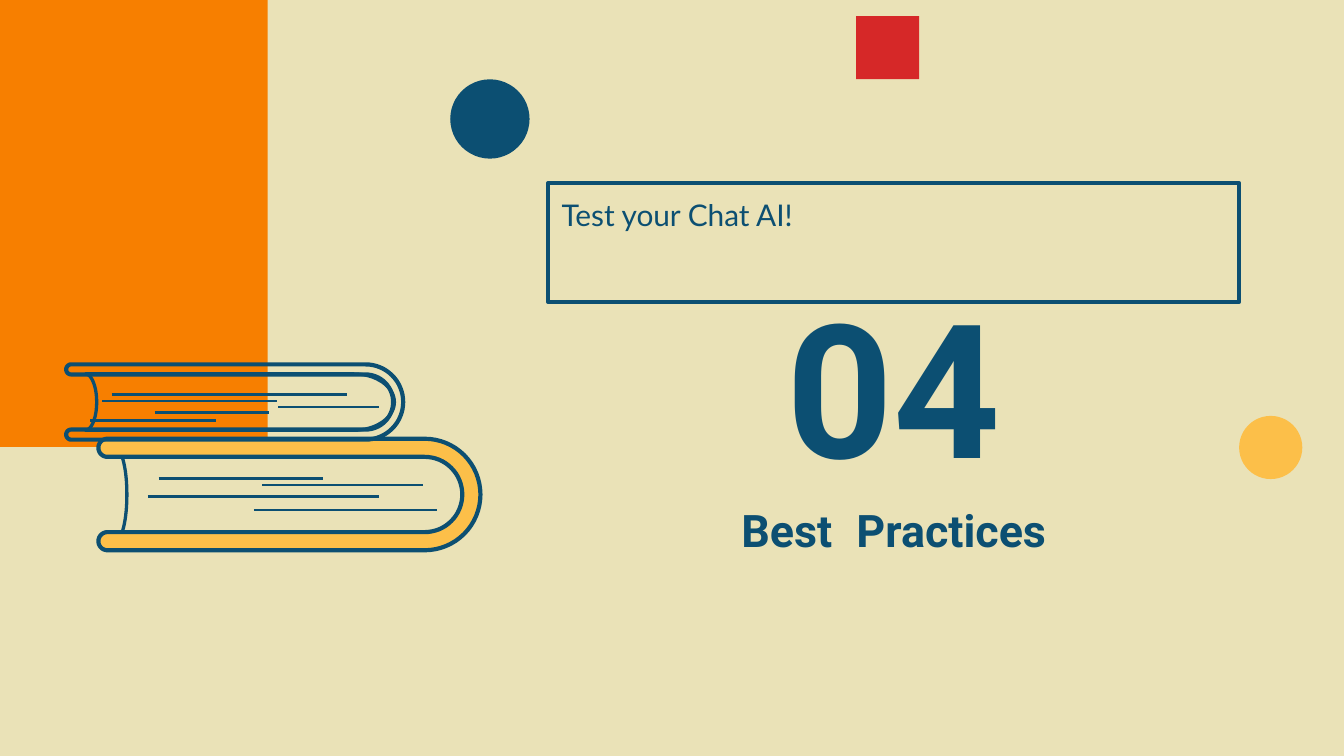
from dataclasses import dataclass
from math import cos, pi, sin
from typing import Optional

from lxml.etree import SubElement
from pptx import Presentation
from pptx.dml.color import RGBColor
from pptx.enum.shapes import MSO_CONNECTOR, MSO_SHAPE
from pptx.enum.text import MSO_ANCHOR, MSO_AUTO_SIZE, PP_ALIGN
from pptx.oxml.ns import qn
from pptx.util import Emu, Inches, Pt

CREAM = RGBColor(0xEA, 0xE2, 0xB7)
NAVY = RGBColor(0x0C, 0x4F, 0x72)
ORANGE = RGBColor(0xF7, 0x7F, 0x00)
YELLOW = RGBColor(0xFC, 0xBF, 0x49)
RED = RGBColor(0xD6, 0x28, 0x28)

# The 16:9 slide is a grid of 100 columns by 56.25 rows
COLUMNS, ROWS = 100, 56.25
CELL = Inches(0.1)
Point = tuple[float, float]


def cells(count: float) -> Emu:
    return Emu(round(count * CELL))


@dataclass
class Box:
    column: float
    row: float
    width: float
    height: float

    def emu(self) -> list[Emu]:
        return [cells(value) for value in (self.column, self.row, self.width, self.height)]


@dataclass
class Decoration:
    kind: MSO_SHAPE
    box: Box
    color: RGBColor


@dataclass
class Book:
    middle: float          # row of the horizontal axis
    left: float            # column where the cover's straight edges start
    bend: float            # column where the cover starts to bend
    outer: float           # outer and inner radius of the cover
    inner: float
    fill: Optional[RGBColor]
    spine: float           # column of the page block's left edge
    page_bend: float
    page_size: Point       # radii of the page block's round end
    rules: list[tuple[float, float, float]]  # row, first and last column


DECORATIONS = [
    Decoration(MSO_SHAPE.RECTANGLE, Box(0, 0, 19.93, 33.25), ORANGE),
    Decoration(MSO_SHAPE.RECTANGLE, Box(63.7, 1.2, 4.7, 4.7), RED),
    Decoration(MSO_SHAPE.OVAL, Box(33.5, 5.9, 5.9, 5.9), NAVY),
    Decoration(MSO_SHAPE.OVAL, Box(92.2, 30.95, 4.7, 4.7), YELLOW),
]
BOOKS = [
    Book(36.8, 8, 31.6, 4.15, 2.8, YELLOW, 8.6, 31.6, (3.45, 3.45),
         [(35.6, 11.8, 24), (36.1, 19.5, 31.5), (36.95, 11, 28.2), (37.95, 18.9, 32.5)]),
    Book(29.92, 5.3, 27.2, 2.8, 2.05, None, 6.35, 26.3, (3.05, 2.1),
         [(29.35, 8.3, 25.8), (29.85, 7.6, 20.6), (30.3, 20.7, 28.2),
          (30.7, 11.5, 20), (31.3, 6.7, 16.1)]),
]


def arc(center: Point, radii: Point, start: float, end: float, steps: int = 32) -> list[Point]:
    angles = [start + (end - start) * step / steps for step in range(steps + 1)]
    return [(center[0] + radii[0] * cos(angle), center[1] + radii[1] * sin(angle))
            for angle in angles]


def draw_outline(slide, points: list[Point], fill: Optional[RGBColor], weight: float) -> None:
    corners = [(cells(column), cells(row)) for column, row in points]
    builder = slide.shapes.build_freeform(*corners[0])
    builder.add_line_segments(corners[1:], close=True)
    shape = builder.convert_to_shape()
    shape.shadow.inherit = False
    if fill is None:
        shape.fill.background()
    else:
        shape.fill.solid()
        shape.fill.fore_color.rgb = fill
    shape.line.color.rgb = NAVY
    shape.line.width = Pt(weight)


def draw_rule(slide, row: float, first: float, last: float) -> None:
    rule = slide.shapes.add_connector(
        MSO_CONNECTOR.STRAIGHT, cells(first), cells(row), cells(last), cells(row))
    rule.line.color.rgb = NAVY
    rule.line.width = Pt(1.25)
    SubElement(rule._element.spPr, qn("a:effectLst"))


def draw_book(slide, book: Book) -> None:
    # Page block: round right end and a hollow left edge
    width, height = book.page_size
    pages = arc((book.page_bend, book.middle), (width, height), -pi / 2, pi / 2)
    pages += arc((book.spine, book.middle), (0.85, height), pi / 2, -pi / 2)
    draw_outline(slide, pages, None, 1.75)

    # Cover: a bent band with rounded tips
    tip = (book.outer - book.inner) / 2
    offset = (book.outer + book.inner) / 2
    bend = (book.bend, book.middle)
    cover = arc(bend, (book.outer, book.outer), -pi / 2, pi / 2)
    cover += arc((book.left, book.middle + offset), (tip, tip), pi / 2, 3 * pi / 2)
    cover += arc(bend, (book.inner, book.inner), pi / 2, -pi / 2)
    cover += arc((book.left, book.middle - offset), (tip, tip), pi / 2, 3 * pi / 2)
    draw_outline(slide, cover, book.fill, 2.25)

    # Lines on the pages
    for rule in book.rules:
        draw_rule(slide, *rule)


def draw_decoration(slide, decoration: Decoration) -> None:
    shape = slide.shapes.add_shape(decoration.kind, *decoration.box.emu())
    shape.shadow.inherit = False
    shape.fill.solid()
    shape.fill.fore_color.rgb = decoration.color
    shape.line.fill.background()


def write_text(shape, pieces: list[tuple[str, float]], font: str, bold: bool,
               alignment: PP_ALIGN, anchor: MSO_ANCHOR) -> None:
    frame = shape.text_frame
    frame.word_wrap = True
    frame.auto_size = MSO_AUTO_SIZE.NONE
    frame.vertical_anchor = anchor
    frame.margin_left = frame.margin_right = CELL
    frame.margin_top = frame.margin_bottom = CELL
    paragraph = frame.paragraphs[0]
    paragraph.alignment = alignment
    for text, size in pieces:
        run = paragraph.add_run()
        run.text = text
        run.font.name = font
        run.font.size = Pt(size)
        run.font.bold = bold
        run.font.color.rgb = NAVY


def main() -> None:
    presentation = Presentation()
    presentation.slide_width = cells(COLUMNS)
    presentation.slide_height = cells(ROWS)
    slide = presentation.slides.add_slide(presentation.slide_layouts[5])
    slide.background.fill.solid()
    slide.background.fill.fore_color.rgb = CREAM

    # Title and section number
    title = slide.shapes.title
    title.left, title.top, title.width, title.height = Box(45.3, 33.7, 42.4, 8.3).emu()
    write_text(title, [("Best", 24), (" ", 52), ("Practices", 24)], "Roboto", True,
               PP_ALIGN.CENTER, MSO_ANCHOR.MIDDLE)
    number = slide.shapes.add_textbox(*Box(45.3, 22.5, 42.4, 12.1).emu())
    write_text(number, [("04", 100)], "Roboto", True, PP_ALIGN.CENTER, MSO_ANCHOR.MIDDLE)

    # Framed subtitle
    subtitle = slide.shapes.add_textbox(*Box(40.8, 13.63, 51.4, 8.84).emu())
    subtitle.line.color.rgb = NAVY
    subtitle.line.width = Pt(2.25)
    write_text(subtitle, [("Test your Chat AI!", 16)], "Lato", False,
               PP_ALIGN.LEFT, MSO_ANCHOR.TOP)

    # Decorations and the stack of books
    for decoration in DECORATIONS:
        draw_decoration(slide, decoration)
    for book in BOOKS:
        draw_book(slide, book)

    presentation.save("out.pptx")


if __name__ == "__main__":
    main()
